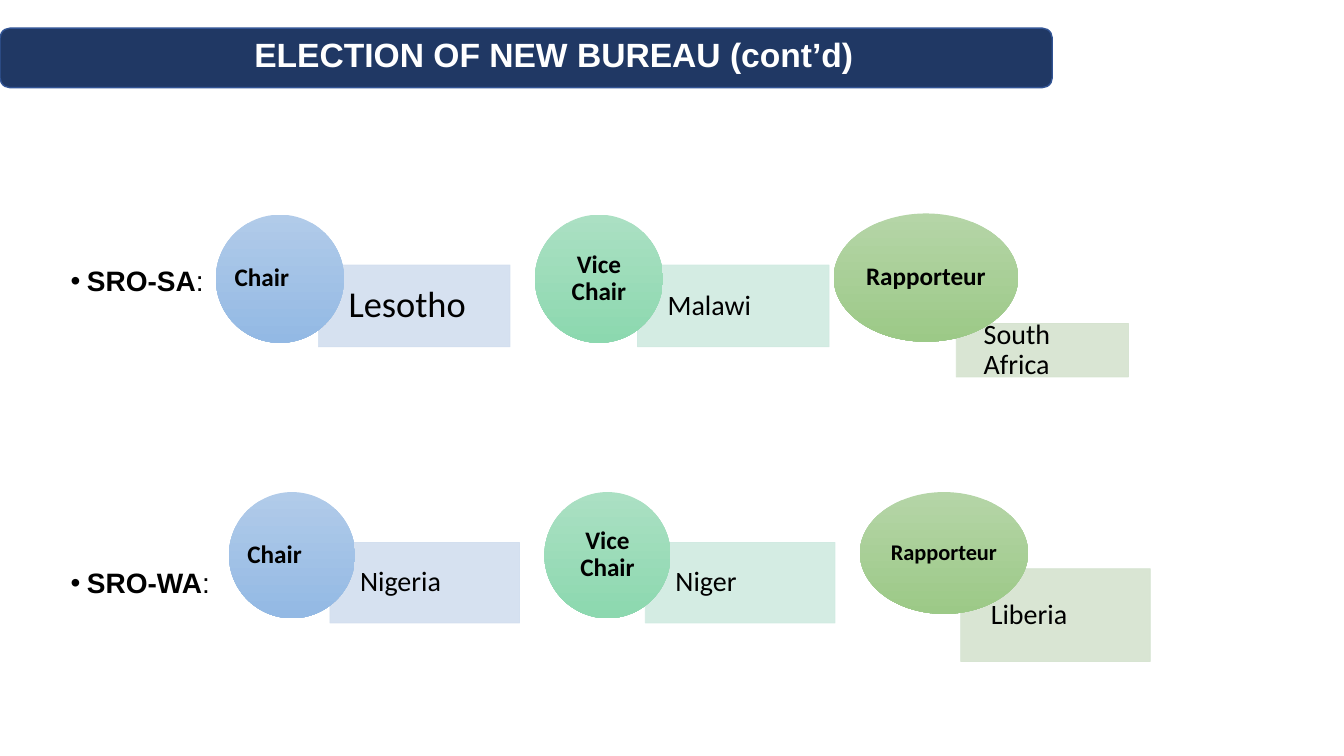
from dataclasses import dataclass

from lxml import etree
from pptx import Presentation
from pptx import util as u
from pptx.dml.color import RGBColor
from pptx.enum import shapes, text
from pptx.oxml import ns


@dataclass(frozen=True)
class Theme:
    heading_font: str = "Arial"
    body_font: str = "Calibri"
    black: str = "000000"
    white: str = "FFFFFF"
    bar: str = "203864"
    bar_line: str = "325494"
    tints: tuple = ("D2DEEF", "D0EAE1", "D5E3CF")
    gradients: tuple = (("B1CBE9", "93B9E4"), ("ABE0C3", "8CD8AF"), ("B5D5A7", "9CC987"))
    title: int = 24
    body: int = 20
    large: int = 26
    role: int = 18
    small_role: int = 16


def rgb(value):
    return RGBColor.from_string(value)


def write(sp, *runs, font, size, color, align=text.PP_ALIGN.LEFT,
          anchor=text.MSO_ANCHOR.MIDDLE, insets=(0, 0, 0, 0), spacing=1.0):
    tf = sp.text_frame
    tf.word_wrap = True
    tf.vertical_anchor = anchor
    tf.margin_left, tf.margin_top, tf.margin_right, tf.margin_bottom = map(u.Cm, insets)
    p = tf.paragraphs[0]
    p.alignment = align
    p.line_spacing = spacing
    for content, bold in runs:
        r = p.add_run()
        r.text = content
        r.font.name = font
        r.font.size = u.Pt(size)
        r.font.bold = bold
        r.font.color.rgb = rgb(color)
    return p


class BureauSlide:
    def __init__(self, prs, theme):
        self.theme = theme
        self.s = prs.slides.add_slide(prs.slide_layouts[6])

    def shape(self, kind, box):
        sp = self.s.shapes.add_shape(kind, *map(u.Cm, box))
        sp.shadow.inherit = False
        return sp

    def title(self, content):
        t = self.theme
        sp = self.shape(shapes.MSO_SHAPE.ROUNDED_RECTANGLE, (0, 0.71, 26.52, 1.5))
        sp.fill.solid()
        sp.fill.fore_color.rgb = rgb(t.bar)
        sp.line.color.rgb = rgb(t.bar_line)
        sp.line.width = u.Pt(1)
        write(sp, (content, True), font=t.heading_font, size=t.title, color=t.white,
              align=text.PP_ALIGN.CENTER, insets=(2.44, 0, 1.04, 0.2))

    def region(self, name, top):
        t = self.theme
        sp = self.s.shapes.add_textbox(*map(u.Cm, (1.68, top, 3.8, 0.82)))
        p = write(sp, (name, True), (":", False), font=t.heading_font, size=t.body,
                  color=t.black, anchor=text.MSO_ANCHOR.TOP)
        pPr = p._p.get_or_add_pPr()
        pPr.set("marL", str(u.Cm(0.51)))
        pPr.set("indent", str(u.Cm(-0.41)))
        etree.SubElement(pPr, ns.qn("a:buFont")).set("typeface", t.heading_font)
        etree.SubElement(pPr, ns.qn("a:buChar")).set("char", "•")

    def country(self, name, box, tint, size, indent):
        t = self.theme
        sp = self.shape(shapes.MSO_SHAPE.RECTANGLE, box)
        sp.fill.solid()
        sp.fill.fore_color.rgb = rgb(tint)
        sp.line.color.rgb = rgb(tint)
        sp.line.width = u.Pt(0.5)
        for color in sp._element.spPr.iter(ns.qn("a:srgbClr")):
            etree.SubElement(color, ns.qn("a:alpha")).set("val", "90000")
        write(sp, (name, False), font=t.body_font, size=size, color=t.black,
              insets=(indent, 0.41, 0.41, 0.41), spacing=0.9)

    def role(self, name, box, gradient, size, align):
        t = self.theme
        sp = self.shape(shapes.MSO_SHAPE.OVAL, box)
        sp.fill.gradient()
        sp.fill.gradient_angle = 270
        for stop, color in zip(sp.fill.gradient_stops, gradient):
            stop.color.rgb = rgb(color)
        sp.line.fill.background()
        write(sp, (name, True), font=t.body_font, size=size, color=t.black,
              align=align, spacing=0.9)

    def officers(self, names, left, top, pitch, diameter, card, last_oval, last_card,
                 sizes, last_role_size, last_indent):
        t = self.theme
        left_align, center = text.PP_ALIGN.LEFT, text.PP_ALIGN.CENTER
        ovals = [(left + i * pitch, top, diameter, diameter) for i in range(2)]
        cards = [(x + 0.8 * diameter, top + 1.27, *card) for x, *_ in ovals]
        columns = zip(("Chair", "Vice Chair", "Rapporteur"), names,
                      ovals + [last_oval], cards + [last_card], t.tints, t.gradients,
                      sizes, (t.role, t.role, last_role_size),
                      (0.76, 0.76, last_indent), (left_align, center, center))
        for role, name, oval, box, tint, gradient, size, role_size, indent, align in columns:
            self.country(name, box, tint, size, indent)
            self.role(role, oval, gradient, role_size, align)


def main():
    prs = Presentation()
    prs.slide_width, prs.slide_height = u.Cm(33.87), u.Cm(19.05)
    t = Theme()
    slide = BureauSlide(prs, t)
    slide.title("ELECTION OF NEW BUREAU (cont’d)")
    slide.region("SRO-SA", 6.65)
    slide.region("SRO-WA", 14.26)
    slide.officers(("Lesotho", "Malawi", "South Africa"), left=5.44, top=5.41, pitch=8.04,
                   diameter=3.23, card=(4.83, 2.06),
                   last_oval=(21.01, 5.38, 4.65, 3.23), last_card=(24.1, 8.15, 4.34, 1.35),
                   sizes=(t.large, t.body, t.body), last_role_size=t.role, last_indent=0.69)
    slide.officers(("Nigeria", "Niger", "Liberia"), left=5.77, top=12.4, pitch=7.95,
                   diameter=3.18, card=(4.78, 2.03),
                   last_oval=(21.67, 12.4, 4.24, 3.07), last_card=(24.21, 14.33, 4.78, 2.34),
                   sizes=(t.body,) * 3, last_role_size=t.small_role, last_indent=0.76)
    prs.save("out.pptx")


if __name__ == "__main__":
    main()
